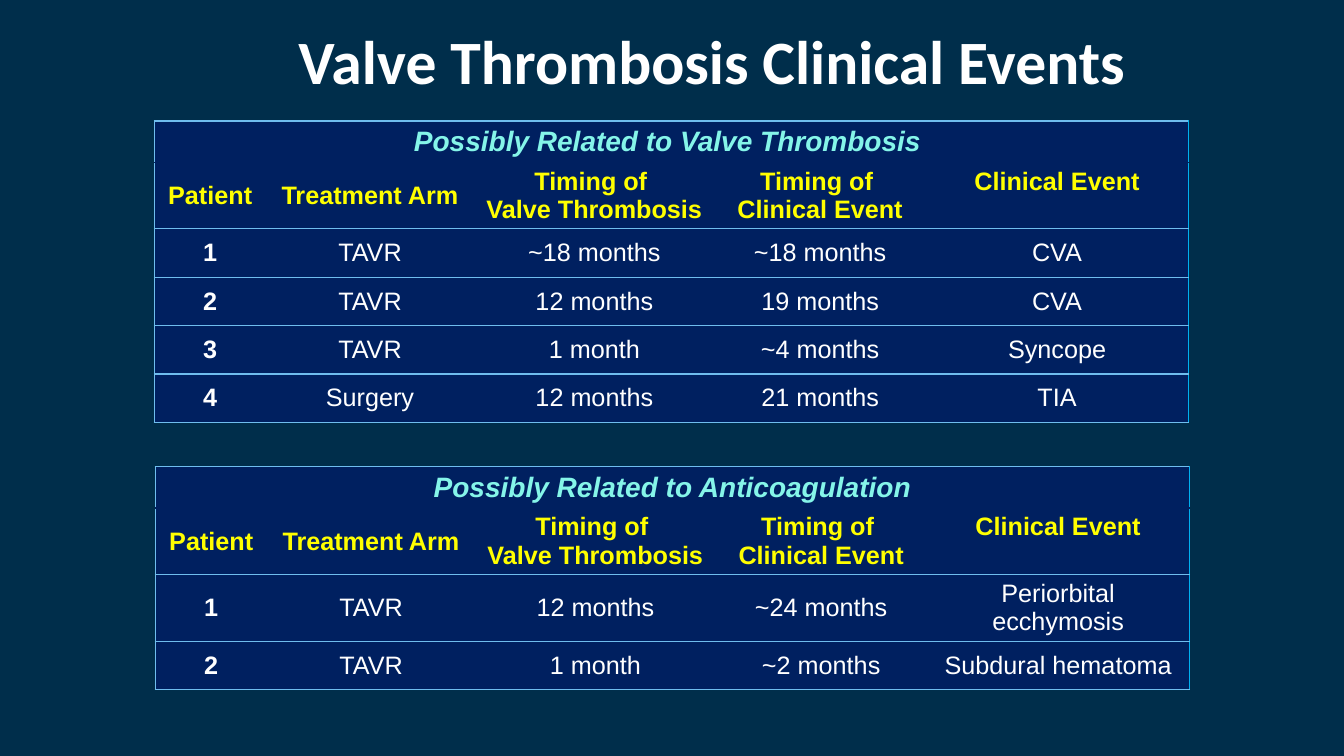
from dataclasses import dataclass

from lxml import etree
from pptx import Presentation
from pptx.dml.color import RGBColor
from pptx.enum import text
from pptx.oxml import ns
from pptx.util import Inches, Pt

NO_STYLE = "{2D5ABB26-0587-4C30-8999-92F81FD0307C}"


@dataclass(frozen=True)
class Theme:
    page: str = "002E4B"
    cell: str = "002060"
    line: str = "6FBDEE"
    edge: str = "00B0F0"
    caption: str = "85F5E9"
    heading: str = "FFFF00"
    body: str = "FFFFFF"
    title_font: str = "Calibri"
    table_font: str = "Arial"
    title_size: int = 44
    caption_size: int = 20
    body_size: int = 18


@dataclass(frozen=True)
class EventTable:
    caption: str
    left: float
    top: float
    rows: list[tuple[str, ...]]


THEME = Theme()
COLUMN_WIDTHS = (1.11, 2.06, 2.39, 2.09, 2.61)
CAPTION_HEIGHT, HEADING_HEIGHT, ROW_HEIGHT = 0.41, 0.65, 0.48
HEADINGS = ("Patient", "Treatment Arm", "Timing of \nValve Thrombosis",
            "Timing of \nClinical Event", "Clinical Event")
TABLES = [
    EventTable("Possibly Related to Valve Thrombosis ", 1.53, 1.2, [
        ("1", "TAVR", "~18 months", "~18 months", "CVA"),
        ("2", "TAVR", "12 months", "19 months", "CVA"),
        ("3", "TAVR", "1 month", "~4 months", "Syncope"),
        ("4", "Surgery", "12 months", "21 months", "TIA"),
    ]),
    EventTable("Possibly Related to Anticoagulation", 1.54, 4.63, [
        ("1", "TAVR", "12 months", "~24 months", "Periorbital ecchymosis"),
        ("2", "TAVR", "1 month", "~2 months", "Subdural hematoma"),
    ]),
]


def write(frame, content: str, *, size: int, color: str, font: str = THEME.table_font,
          bold: bool = False, italic: bool = False) -> None:
    """Fill a text frame with centred paragraphs, one for each line."""
    frame.text = content
    for para in frame.paragraphs:
        para.alignment = text.PP_ALIGN.CENTER
        for span in para.runs:
            span.font.name = font
            span.font.size = Pt(size)
            span.font.bold = bold
            span.font.italic = italic
            span.font.color.rgb = RGBColor.from_string(color)


def style_cell(cell, *, middle: bool = True, **borders: str) -> None:
    """Set anchor, fill and 1 pt borders, given as L, R, T or B = colour."""
    cell.vertical_anchor = text.MSO_ANCHOR.MIDDLE if middle else text.MSO_ANCHOR.TOP
    properties = cell._tc.get_or_add_tcPr()
    for side in "LRTB":
        if side in borders:
            line = etree.SubElement(properties, ns.qn(f"a:ln{side}"), w=str(Pt(1)))
            fill = etree.SubElement(line, ns.qn("a:solidFill"))
            etree.SubElement(fill, ns.qn("a:srgbClr"), val=borders[side])
    cell.fill.solid()
    cell.fill.fore_color.rgb = RGBColor.from_string(THEME.cell)


def outer_sides(column: int) -> dict[str, str]:
    if column == 0:
        return {"L": THEME.line}
    return {"R": THEME.edge} if column == len(COLUMN_WIDTHS) - 1 else {}


def add_event_table(page, events: EventTable) -> None:
    heights = [CAPTION_HEIGHT, HEADING_HEIGHT] + [ROW_HEIGHT] * len(events.rows)
    frame = page.shapes.add_table(
        len(heights), len(COLUMN_WIDTHS), Inches(events.left), Inches(events.top),
        Inches(sum(COLUMN_WIDTHS)), Inches(sum(heights)))
    table = frame.table
    table.first_row = table.horz_banding = False
    table._tbl.tblPr.find(ns.qn("a:tableStyleId")).text = NO_STYLE
    for column, width in zip(table.columns, COLUMN_WIDTHS):
        column.width = Inches(width)
    for row, height in zip(table.rows, heights):
        row.height = Inches(height)

    table.cell(0, 0).merge(table.cell(0, len(COLUMN_WIDTHS) - 1))
    write(table.cell(0, 0).text_frame, events.caption, size=THEME.caption_size,
          color=THEME.caption, bold=True, italic=True)
    for column, heading in enumerate(HEADINGS):
        sides = outer_sides(column)
        # The merged caption takes its outline from its first cell.
        caption_sides = {"L": THEME.line, "R": THEME.edge} if column == 0 else sides
        style_cell(table.cell(0, column), T=THEME.line, **caption_sides)
        cell = table.cell(1, column)
        write(cell.text_frame, heading, size=THEME.body_size,
              color=THEME.heading, bold=True)
        style_cell(cell, middle=column < 2, T=THEME.cell, B=THEME.line, **sides)
    for row, values in enumerate(events.rows, start=2):
        for column, value in enumerate(values):
            cell = table.cell(row, column)
            write(cell.text_frame, value, size=THEME.body_size,
                  color=THEME.body, bold=column == 0)
            style_cell(cell, T=THEME.line, B=THEME.line, **outer_sides(column))


def add_title(page, content: str) -> None:
    title = page.shapes.title
    title.left, title.top = Inches(0), Inches(0.18)
    title.width, title.height = Inches(13.33), Inches(0.83)
    frame = title.text_frame
    frame.word_wrap = True
    frame.auto_size = text.MSO_AUTO_SIZE.NONE
    frame.vertical_anchor = text.MSO_ANCHOR.MIDDLE
    frame.margin_left = Inches(0.85)
    frame.margin_top = frame.margin_right = frame.margin_bottom = Inches(0.05)
    write(frame, content, size=THEME.title_size, color=THEME.body,
          font=THEME.title_font, bold=True)


def main() -> None:
    deck = Presentation()
    deck.slide_width, deck.slide_height = Inches(13.33), Inches(7.5)
    page = deck.slides.add_slide(deck.slide_layouts.get_by_name("Title Only"))
    page.background.fill.solid()
    page.background.fill.fore_color.rgb = RGBColor.from_string(THEME.page)
    add_title(page, "Valve Thrombosis Clinical Events")
    for events in TABLES:
        add_event_table(page, events)
    deck.save("out.pptx")


if __name__ == "__main__":
    main()
